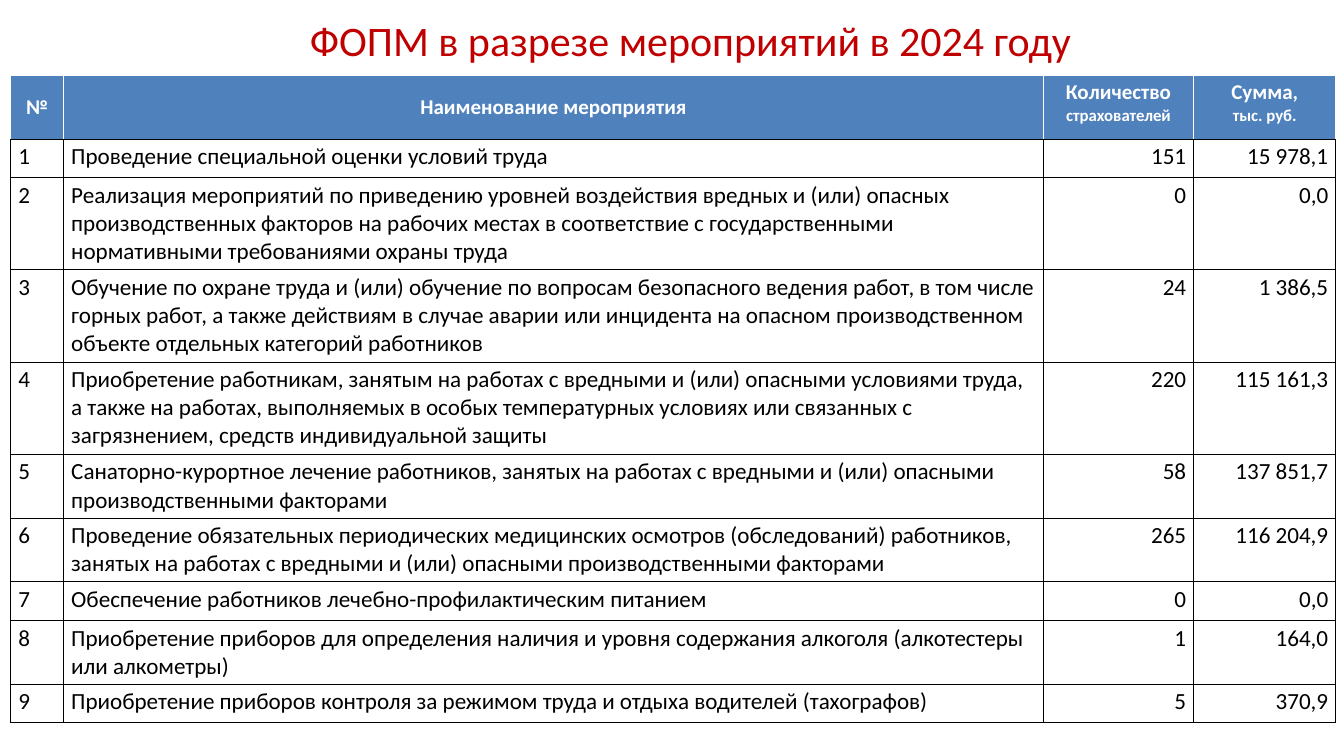
from dataclasses import dataclass
from lxml.etree import SubElement
from pptx import Presentation
from pptx.dml.color import RGBColor
from pptx.enum.text import MSO_ANCHOR, PP_ALIGN
from pptx.oxml.ns import qn
from pptx.util import Inches, Pt


@dataclass(frozen=True)
class Theme:
    font: str = "Calibri"
    title_color: str = "C00000"
    header_fill: str = "4F81BD"
    white: str = "FFFFFF"
    black: str = "000000"
    title_size: int = 40
    header_size: int = 20
    unit_size: int = 16
    body_size: int = 22
    border: int = 1


theme = Theme()

# Content: header paragraphs, then lines taken, measure, insured employers, sum
headings = [["№"], ["Наименование мероприятия"],
            ["Количество", "страхователей"], ["Сумма,", "тыс. руб."]]
measures = [
    (1, "Проведение специальной оценки условий труда", "151", "15 978,1"),
    (3, "Реализация мероприятий по приведению уровней воздействия вредных и (или) опасных "
        "производственных факторов на рабочих местах в соответствие с государственными "
        "нормативными требованиями охраны труда", "0", "0,0"),
    (3, "Обучение по охране труда и (или) обучение по вопросам безопасного ведения работ, "
        "в том числе горных работ, а также действиям в случае аварии или инцидента на опасном "
        "производственном объекте отдельных категорий работников", "24", "1 386,5"),
    (3, "Приобретение работникам, занятым на работах с вредными и (или) опасными условиями "
        "труда, а также на работах, выполняемых в особых температурных условиях или связанных "
        "с загрязнением, средств индивидуальной защиты", "220", "115 161,3"),
    (2, "Санаторно-курортное лечение работников, занятых на работах с вредными и (или) "
        "опасными производственными факторами", "58", "137 851,7"),
    (2, "Проведение обязательных периодических медицинских осмотров (обследований) "
        "работников, занятых на работах с вредными и (или) опасными производственными "
        "факторами", "265", "116 204,9"),
    (1, "Обеспечение работников лечебно-профилактическим питанием", "0", "0,0"),
    (2, "Приобретение приборов для определения наличия и уровня содержания алкоголя "
        "(алкотестеры или алкометры)", "1", "164,0"),
    (1, "Приобретение приборов контроля за режимом труда и отдыха водителей (тахографов)",
     "5", "370,9"),
]

# Slide and its grid of 100 columns by 100 rows
deck = Presentation()
deck.slide_width, deck.slide_height = Inches(17.78), Inches(10)
slide = deck.slides.add_slide(deck.slide_layouts[6])
col, row = deck.slide_width / 100, deck.slide_height / 100
column_shares = [3.94, 72.89, 11.19, 10.57]
header_share = 8.4
share_by_lines = {1: 5.1, 2: 8.4, 3: 12.2}
row_shares = [header_share] + [share_by_lines[lines] for lines, *_ in measures]


def style(paragraph, size, color, align, bold=False):
    paragraph.alignment = align
    paragraph.font.name = theme.font
    paragraph.font.size = Pt(size)
    paragraph.font.bold = bold
    paragraph.font.color.rgb = RGBColor.from_string(color)


def set_borders(cell, **colors):
    properties = cell._tc.get_or_add_tcPr()
    for place, side in enumerate("LRTB"):
        line = SubElement(properties, qn(f"a:ln{side}"), w=str(Pt(theme.border)))
        fill = SubElement(line, qn("a:solidFill"))
        SubElement(fill, qn("a:srgbClr"), val=colors.get(side, theme.black))
        properties.insert(place, line)


# Table of measures
table = slide.shapes.add_table(
    len(row_shares), len(column_shares), round(0.8 * col), round(10 * row),
    round(sum(column_shares) * col), round(sum(row_shares) * row)).table
for column, share in zip(table.columns, column_shares):
    column.width = round(share * col)
for table_row, share in zip(table.rows, row_shares):
    table_row.height = round(share * row)

# Header row
for index, lines in enumerate(headings):
    cell = table.cell(0, index)
    cell.text = "\n".join(lines)
    if len(lines) == 1:
        cell.vertical_anchor = MSO_ANCHOR.MIDDLE
    sizes = (theme.header_size, theme.unit_size)
    for paragraph, size in zip(cell.text_frame.paragraphs, sizes):
        style(paragraph, size, theme.white, PP_ALIGN.CENTER, bold=True)
    cell.fill.solid()
    cell.fill.fore_color.rgb = RGBColor.from_string(theme.header_fill)
    set_borders(cell, L=theme.white, R=theme.white, T=theme.white)

# Body rows: number and name on the left, figures on the right
for number, (_, *values) in enumerate(measures, start=1):
    for index, value in enumerate([str(number), *values]):
        cell = table.cell(number, index)
        cell.text = value
        align = PP_ALIGN.LEFT if index < 2 else PP_ALIGN.RIGHT
        style(cell.text_frame.paragraphs[0], theme.body_size, theme.black, align)
        cell.fill.background()
        set_borders(cell)

# Title
title = slide.shapes.add_textbox(
    round(20.92 * col), round(1.4 * row), round(60.91 * col), round(7.7 * row)).text_frame
title.word_wrap = True
title.text = "ФОПМ в разрезе мероприятий в 2024 году"
style(title.paragraphs[0], theme.title_size, theme.title_color, PP_ALIGN.CENTER)

deck.save("out.pptx")
